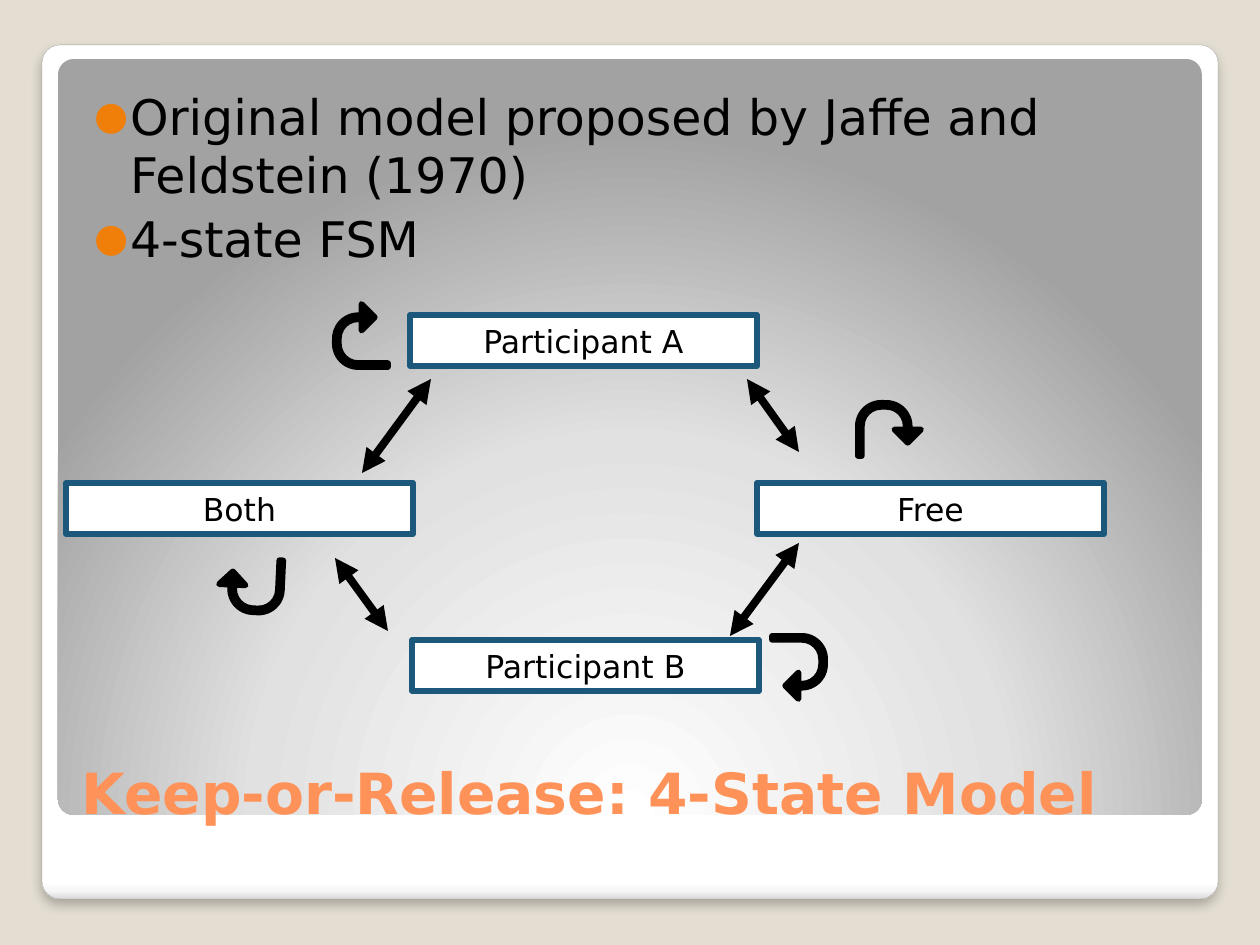
from dataclasses import dataclass

from lxml import etree
from pptx import Presentation
from pptx.dml.color import RGBColor
from pptx.enum.shapes import MSO_CONNECTOR, MSO_SHAPE
from pptx.enum.text import MSO_ANCHOR, MSO_AUTO_SIZE, PP_ALIGN
from pptx.oxml.ns import qn
from pptx.util import Emu, Pt

ROUND_RECT = MSO_SHAPE.ROUNDED_RECTANGLE
RECT = MSO_SHAPE.RECTANGLE
UTURN = MSO_SHAPE.U_TURN_ARROW
STRAIGHT = MSO_CONNECTOR.STRAIGHT
TOP, BOTTOM = MSO_ANCHOR.TOP, MSO_ANCHOR.BOTTOM
GROW = MSO_AUTO_SIZE.SHAPE_TO_FIT_TEXT
CENTER = PP_ALIGN.CENTER
EMU_PER_INCH, PX_PER_INCH = 914400, 126


@dataclass(frozen=True)
class Theme:
    font: str = "DejaVu Sans"
    background: str = "E3DED1"
    card_line: str = "A4A4A4"
    title: str = "FF9258"
    ink: str = "000000"
    bullet: str = "F07F09"
    box_fill: str = "FFFFFF"
    box_line: str = "1B587C"
    card_stops: tuple = ((0, "FFFFFF"), (98, "FFFFFF"), (99, "F7F7F7"), (100, "DADADA"))
    panel_stops: tuple = ((0, "FFFFFF"), (55, "E1E1E1"), (100, "A2A2A2"))
    title_size: float = 32.4
    body_size: float = 28
    box_size: float = 18
    outline: float = 3.35
    link: float = 4.5


def px(n):
    return Emu(round(n * EMU_PER_INCH / PX_PER_INCH))


def rgb(value):
    return RGBColor.from_string(value)


def add(parent, tag, **attrs):
    return etree.SubElement(parent, qn(f"a:{tag}"), {k: str(v) for k, v in attrs.items()})


class Deck:
    def __init__(self, theme, width, height):
        self.theme = theme
        self.prs = Presentation()
        self.prs.slide_width, self.prs.slide_height = px(width), px(height)
        self.slide = self.prs.slides.add_slide(self.prs.slide_layouts[6])
        fill = self.slide.background.fill
        fill.solid()
        fill.fore_color.rgb = rgb(theme.background)

    def shape(self, kind, box, adjustments=()):
        sp = self.slide.shapes.add_shape(kind, *map(px, box))
        sp.shadow.inherit = False
        for i, value in enumerate(adjustments):
            sp.adjustments[i] = value
        return sp

    def paint(self, sp, fill, line):
        sp.fill.solid()
        sp.fill.fore_color.rgb = rgb(fill)
        sp.line.color.rgb = rgb(line)
        sp.line.width = Pt(self.theme.outline)

    def gradient(self, sp, stops):
        sp.fill.gradient()
        grad = sp._element.spPr.find(qn("a:gradFill"))
        grad.clear()
        gs_list = add(grad, "gsLst")
        for pos, color in stops:
            add(add(gs_list, "gs", pos=pos * 1000), "srgbClr", val=color)
        return grad

    def style_runs(self, p, size, color, bold=False):
        for r in p.runs:
            r.font.name = self.theme.font
            r.font.size = Pt(size)
            r.font.bold = bold
            r.font.color.rgb = rgb(color)

    def text_box(self, box, text, anchor):
        tf = self.slide.shapes.add_textbox(*map(px, box)).text_frame
        tf.word_wrap = True
        tf.vertical_anchor = anchor
        tf.text = text
        return tf

    def card(self, box):
        sp = self.shape(ROUND_RECT, box, [0.021])
        add(self.gradient(sp, self.theme.card_stops), "lin", ang=5400000, scaled=0)
        sp.line.color.rgb = rgb(self.theme.card_line)
        sp.line.width = Pt(0.16)
        effects = sp._element.spPr.find(qn("a:effectLst"))
        shadow = add(effects, "outerShdw", blurRad=Pt(6), dist=Pt(4), dir=5400000)
        add(add(shadow, "srgbClr", val=self.theme.ink), "alpha", val=25000)

    def panel(self, box):
        sp = self.shape(ROUND_RECT, box, [0.021])
        focus = add(self.gradient(sp, self.theme.panel_stops), "path", path="circle")
        add(focus, "fillToRect", l=50000, t=175000, r=50000, b=-75000)
        sp.line.fill.background()

    def title(self, box, text):
        tf = self.text_box(box, text, BOTTOM)
        self.style_runs(tf.paragraphs[0], self.theme.title_size, self.theme.title, bold=True)

    def bullets(self, box, items):
        tf = self.text_box(box, "\n".join(items), TOP)
        tf.margin_left = px(25)
        tf.margin_top = px(13)
        for p in tf.paragraphs:
            self.style_runs(p, self.theme.body_size, self.theme.ink)
            p.space_before = Pt(2.5)
            pPr = p._p.get_or_add_pPr()
            pPr.set("marL", str(px(36)))
            pPr.set("indent", str(px(-36)))
            add(add(pPr, "buClr"), "srgbClr", val=self.theme.bullet)
            add(pPr, "buSzPct", val=80000)
            add(pPr, "buFont", typeface=self.theme.font)
            add(pPr, "buChar", char="●")

    def state(self, box, name):
        sp = self.shape(RECT, box)
        self.paint(sp, self.theme.box_fill, self.theme.box_line)
        tf = sp.text_frame
        tf.word_wrap = True
        tf.auto_size = GROW
        tf.text = name
        p = tf.paragraphs[0]
        p.alignment = CENTER
        self.style_runs(p, self.theme.box_size, self.theme.ink)

    def self_loop(self, box, rotation):
        sp = self.shape(UTURN, box, [0.073, 0.25, 0.25, 0.438, 0.75])
        sp.rotation = rotation
        self.paint(sp, self.theme.ink, self.theme.ink)
        add(sp._element.spPr.find(qn("a:ln")), "round")

    def transition(self, start, end):
        line = self.slide.shapes.add_connector(STRAIGHT, *map(px, start + end))
        line.line.color.rgb = rgb(self.theme.ink)
        line.line.width = Pt(self.theme.link)
        ln = line._element.spPr.find(qn("a:ln"))
        add(ln, "headEnd", type="triangle")
        add(ln, "tailEnd", type="triangle")
        add(line._element.spPr, "effectLst")


def main():
    deck = Deck(Theme(), 1260, 945)
    deck.card((42, 45, 1176, 854))
    deck.panel((58, 59, 1144, 756))
    deck.title((69, 687, 1128, 145), "Keep-or-Release: 4-State Model")
    deck.bullets(
        (69, 73, 1128, 221),
        ["Original model proposed by Jaffe and Feldstein (1970)", "4-state FSM"],
    )

    states = (
        ("Participant A", 410, 315),
        ("Participant B", 412, 640),
        ("Both", 66, 483),
        ("Free", 757, 483),
    )
    for name, left, top in states:
        deck.state((left, top, 347, 51), name)

    loops = ((858, 403, 0), (219, 559, 182.6), (767, 641, 90), (330, 309, 270))
    for left, top, rotation in loops:
        deck.self_loop((left, top, 63, 53), rotation)

    transitions = (
        ((335, 558), (388, 631)),
        ((747, 379), (799, 452)),
        ((431, 379), (362, 473)),
        ((799, 543), (730, 636)),
    )
    for start, end in transitions:
        deck.transition(start, end)

    deck.prs.save("out.pptx")


if __name__ == "__main__":
    main()
